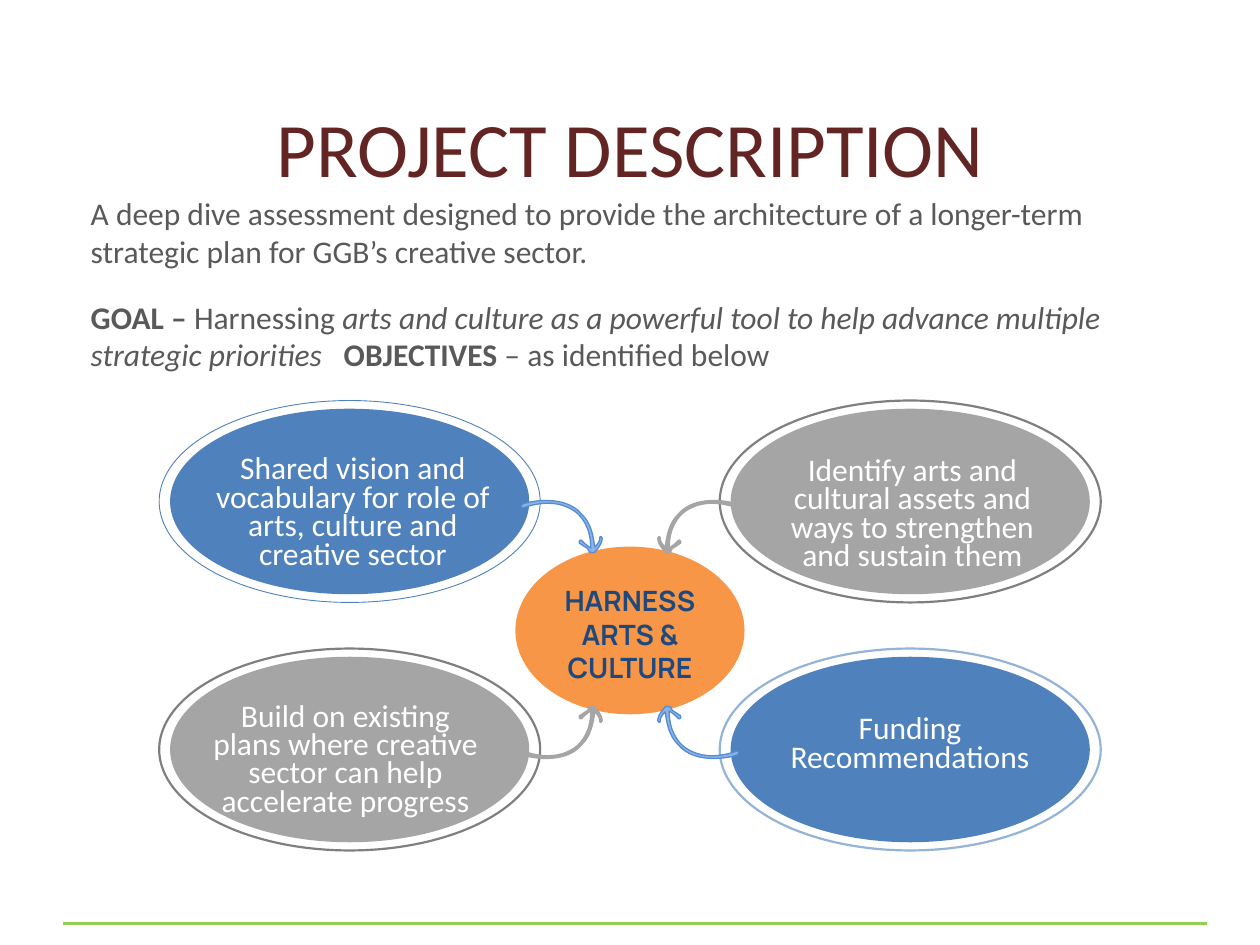
from lxml import etree
from pptx import Presentation
from pptx.dml.color import RGBColor
from pptx.enum.shapes import MSO_CONNECTOR, MSO_SHAPE
from pptx.enum.text import MSO_ANCHOR, PP_ALIGN
from pptx.oxml.ns import qn
from pptx.util import Cm, Pt

LEFT, CENTER = PP_ALIGN.LEFT, PP_ALIGN.CENTER
TOP, MIDDLE = MSO_ANCHOR.TOP, MSO_ANCHOR.MIDDLE
OVAL, STRAIGHT = MSO_SHAPE.OVAL, MSO_CONNECTOR.STRAIGHT

GREY, BLUE, TEXT_GREY, WHITE = "A5A5A5", "4F81BD", "595959", "FFFFFF"

# Each span is (text, bold, italic)
TITLE = [("PROJECT DESCRIPTION", False, False)]
INTRO = [("A deep dive assessment designed to provide the architecture of a "
          "longer-term strategic plan for GGB’s creative sector.", False, False)]
GOAL = [
    ("GOAL – ", True, False),
    ("Harnessing ", False, False),
    ("arts and culture as a powerful tool to help advance multiple "
     "strategic priorities\t", False, True),
    ("OBJECTIVES", True, False),
    (" – as identified below", False, False),
]
HUB = [("HARNESS ARTS & CULTURE", True, False)]

# text, column side, row side, fill, ring colour, ring width, label left, top, height
OBJECTIVES = [
    ("Shared vision and vocabulary for role of arts, culture and creative sector",
     -1, -1, BLUE, BLUE, 0.5, 4.09, 9.09, 2.29),
    ("Build on existing plans where creative sector can help accelerate progress",
     -1, 1, GREY, "7F7F7F", 1.25, 3.94, 14.07, 2.29),
    ("Identify arts and cultural assets and ways to strengthen and sustain them",
     1, -1, GREY, "7F7F7F", 1.25, 15.37, 9.12, 2.29),
    ("Funding Recommendations",
     1, 1, BLUE, "93B3D7", 1.25, 15.32, 14.33, 1.3),
]
# column side, row side, fill, line
ARROWS = [
    (-1, -1, "8CB3E3", "538CD5"),
    (1, -1, GREY, GREY),
    (1, 1, "8CB3E3", "538CD5"),
    (-1, 1, GREY, GREY),
]

CENTER_X, CENTER_Y = 12.7, 12.69
ROW_CENTER_Y = 12.61
COLUMN_OFFSET, ROW_OFFSET = 5.65, 2.5

# Outline of one curved arrow as distances from the hub centre:
# the start, then cubic curves of two control points and an end
ARROW_START = (0.58, 1.87)
ARROW_CURVES = [
    ((0.61, 1.87), (0.61, 1.86), (0.61, 1.84)),
    ((0.61, 1.77), (0.66, 1.71), (0.71, 1.66)),
    ((0.74, 1.89), (0.79, 2.15), (0.97, 2.32)),
    ((1.14, 2.53), (1.42, 2.6), (1.68, 2.6)),
    ((1.83, 2.6), (2.01, 2.58), (2.16, 2.53)),
    ((2.21, 2.5), (2.18, 2.45), (2.16, 2.45)),
    ((1.88, 2.55), (1.6, 2.58), (1.35, 2.5)),
    ((1.22, 2.45), (1.12, 2.4), (1.04, 2.32)),
    ((0.94, 2.22), (0.89, 2.12), (0.84, 1.99)),
    ((0.81, 1.89), (0.79, 1.77), (0.79, 1.64)),
    ((0.81, 1.66), (0.9, 1.71), (0.97, 1.79)),
    ((0.99, 1.82), (1.04, 1.79), (1.02, 1.74)),
    ((0.97, 1.71), (0.91, 1.66), (0.86, 1.64)),
    ((0.84, 1.61), (0.84, 1.59), (0.81, 1.56)),
    ((0.79, 1.56), (0.74, 1.54), (0.71, 1.56)),
    ((0.64, 1.64), (0.56, 1.74), (0.56, 1.84)),
]
CURVE_STEPS = 8


def color(value):
    return RGBColor.from_string(value)


def paint(shape, fill=None, line=None, line_width=0.75):
    shape.shadow.inherit = False
    if fill:
        shape.fill.solid()
        shape.fill.fore_color.rgb = color(fill)
    else:
        shape.fill.background()
    if line:
        shape.line.color.rgb = color(line)
        shape.line.width = Pt(line_width)
    else:
        shape.line.fill.background()


def write(box, spans, size=18, font="Calibri", ink=TEXT_GREY, align=LEFT,
          anchor=TOP, spacing=1.0, tab=None):
    frame = box.text_frame
    frame.word_wrap = True
    frame.vertical_anchor = anchor
    frame.margin_left = frame.margin_right = Cm(0.25)
    frame.margin_top = frame.margin_bottom = Cm(0.13)
    para = frame.paragraphs[0]
    if tab:
        stops = etree.SubElement(para._p.get_or_add_pPr(), qn("a:tabLst"))
        etree.SubElement(stops, qn("a:tab"), pos=str(Cm(tab)), algn="l")
    para.alignment = align
    para.line_spacing = spacing
    para.space_before = Pt(0)
    for text, bold, italic in spans:
        span = para.add_run()
        span.text = text
        span.font.name = font
        span.font.size = Pt(size)
        span.font.bold = bold
        span.font.italic = italic
        span.font.color.rgb = color(ink)


def add_text(page, left, top, width, height, spans, **style):
    box = page.shapes.add_textbox(Cm(left), Cm(top), Cm(width), Cm(height))
    write(box, spans, **style)


def add_oval(page, center_x, center_y, width, height, **style):
    oval = page.shapes.add_shape(OVAL, Cm(center_x - width / 2), Cm(center_y - height / 2),
                                 Cm(width), Cm(height))
    paint(oval, **style)


def arrow_points():
    """Return the arrow outline with its curves split into short lines."""
    points = [ARROW_START]
    for first, second, end in ARROW_CURVES:
        start = points[-1]
        for step in range(1, CURVE_STEPS + 1):
            t = step / CURVE_STEPS
            u = 1 - t
            points.append(tuple(
                u**3 * a + 3 * u * u * t * b + 3 * u * t * t * c + t**3 * d
                for a, b, c, d in zip(start, first, second, end)))
    return points


def add_arrow(page, side, row, fill, line):
    corners = [(Cm(CENTER_X + side * x), Cm(CENTER_Y + row * y))
               for x, y in arrow_points()]
    builder = page.shapes.build_freeform(*corners[0])
    builder.add_line_segments(corners[1:], close=True)
    paint(builder.convert_to_shape(), fill=fill, line=line)


def main():
    deck = Presentation()
    deck.slide_width, deck.slide_height = Cm(25.4), Cm(19.05)
    page = deck.slides.add_slide(deck.slide_layouts[5])

    title = page.shapes.title
    title.left, title.top, title.width, title.height = Cm(0.33), Cm(1.9), Cm(24.76), Cm(2.44)
    write(title, TITLE, size=44, ink="632523", align=CENTER)

    rule = page.shapes.add_connector(STRAIGHT, Cm(1.27), Cm(18.62), Cm(24.33), Cm(18.62))
    rule.line.color.rgb = color("92D050")
    rule.line.width = Pt(1.5)
    etree.SubElement(rule._element.spPr, qn("a:effectLst"))

    add_oval(page, CENTER_X, 12.71, 4.62, 3.38, fill="F79646")
    for _, side, row, fill, ring, ring_width, *_ in OBJECTIVES:
        x, y = CENTER_X + side * COLUMN_OFFSET, ROW_CENTER_Y + row * ROW_OFFSET
        add_oval(page, x, y, 7.24, 3.74, fill=fill)
        add_oval(page, x, y, 7.68, 4.07, line=ring, line_width=ring_width)
    for arrow in ARROWS:
        add_arrow(page, *arrow)

    add_text(page, 1.58, 3.78, 22.22, 1.8, INTRO)
    for text, *_, left, top, height in OBJECTIVES:
        add_text(page, left, top, 6.05, height, [(text, False, False)],
                 ink=WHITE, align=CENTER, spacing=0.75)
    add_text(page, 10.92, 11.63, 3.56, 2.31, HUB, size=16, font="Manrope",
             ink="1F497D", align=CENTER, anchor=MIDDLE)
    add_text(page, 1.58, 5.87, 23.22, 2.57, GOAL, tab=5.1)

    deck.save("out.pptx")


if __name__ == "__main__":
    main()
